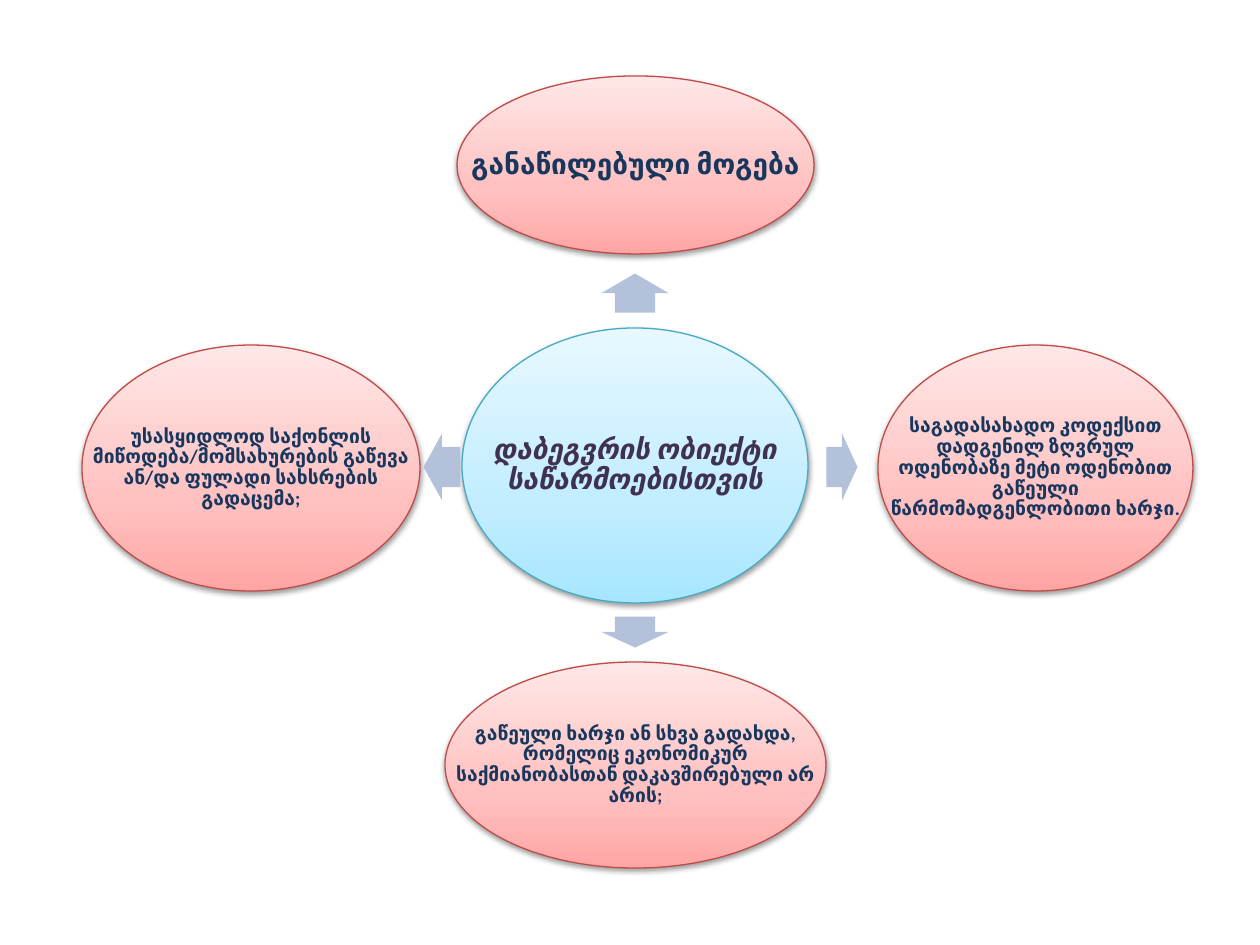
from lxml import etree
from pptx import Presentation
from pptx import util as u
from pptx.dml.color import RGBColor
from pptx.enum import shapes, text
from pptx.oxml import parse_xml

PX = 914400 / 126
NS = "http://schemas.openxmlformats.org/drawingml/2006/main"
THEME = {
    "font": "Calibri", "big": 16, "small": 11,
    "hub": {"stops": ("A7E6FF", "C1EDFF", "E7F8FF"), "line": "46AAC5", "ink": "403152"},
    "leaf": {"stops": ("FFA6A5", "FFC0BF", "FFE7E7"), "line": "BF4C48", "ink": "17375E"},
    "arrow": "B3C1DB",
}


def px(*nums):
    return [u.Emu(round(n * PX)) for n in nums]


def oval(box, look, words, size):
    """Add a shaded ellipse and its caption across the full width."""
    tone = THEME[look]
    form = slide.shapes.add_shape(shapes.MSO_SHAPE.OVAL, *px(*box))
    form.line.color.rgb = RGBColor.from_string(tone["line"])
    form.line.width = u.Pt(0.75)
    stops = "".join(f'<a:gs pos="{pos}"><a:srgbClr val="{rgb}"/></a:gs>'
                    for pos, rgb in zip((0, 35000, 100000), tone["stops"]))
    prop = form._element.spPr
    prop.find(f"{{{NS}}}prstGeom").addnext(parse_xml(
        f'<a:gradFill xmlns:a="{NS}" rotWithShape="1"><a:gsLst>{stops}</a:gsLst>'
        '<a:lin ang="16200000" scaled="0"/></a:gradFill>'))
    form.shadow.inherit = False
    glow = etree.SubElement(prop.find(f"{{{NS}}}effectLst"), f"{{{NS}}}outerShdw",
                            blurRad="40000", dist="20000", dir="5400000", rotWithShape="0")
    shade = etree.SubElement(glow, f"{{{NS}}}srgbClr", val="000000")
    etree.SubElement(shade, f"{{{NS}}}alpha", val="38000")

    frame = slide.shapes.add_textbox(*px(*box)).text_frame
    frame.word_wrap = True
    frame.vertical_anchor = text.MSO_ANCHOR.MIDDLE
    frame.margin_left, frame.margin_top, frame.margin_right, frame.margin_bottom = px(2, 2, 2, 2)
    frame.text = words
    para = frame.paragraphs[0]
    para.alignment = text.PP_ALIGN.CENTER
    para.line_spacing = 0.9
    font = para.runs[0].font
    font.name, font.size, font.bold = THEME["font"], u.Pt(THEME[size]), True
    font.italic = look == "hub"
    font.color.rgb = RGBColor.from_string(tone["ink"])


deck = Presentation()
deck.slide_width, deck.slide_height = px(1260, 945)
slide = deck.slides.add_slide(deck.slide_layouts[6])

oval((462, 328, 346, 275), "hub", "დაბეგვრის ობიექტი საწარმოებისთვის", "big")

leaves = [
    ((457, 76, 357, 178), "განაწილებული მოგება", "big"),
    ((878, 345, 315, 246), "საგადასახადო კოდექსით დადგენილ ზღვრულ ოდენობაზე მეტი "
     "ოდენობით გაწეული წარმომადგენლობითი ხარჯი.", "small"),
    ((445, 662, 381, 206), "გაწეული ხარჯი ან სხვა გადახდა, რომელიც ეკონომიკურ "
     "საქმიანობასთან დაკავშირებული არ არის;", "small"),
    ((82, 345, 338, 246), "უსასყიდლოდ საქონლის მიწოდება/მომსახურების გაწევა "
     "ან/და ფულადი სახსრების გადაცემა;", "small"),
]
for box, words, size in leaves:
    oval(box, "leaf", words, size)

# Arrow centre, length and turn, clockwise from the top
WIDE = 67
for mid, row, long, turn in [(635, 293, 39, 270), (842, 467, 31, 0),
                             (635, 632, 31, 90), (442, 467, 37, 180)]:
    arrow = slide.shapes.add_shape(shapes.MSO_SHAPE.RIGHT_ARROW,
                                   *px(mid - long / 2, row - WIDE / 2, long, WIDE))
    arrow.adjustments[0], arrow.adjustments[1] = 0.6, 0.5
    arrow.rotation = turn
    arrow.fill.solid()
    arrow.fill.fore_color.rgb = RGBColor.from_string(THEME["arrow"])
    arrow.line.fill.background()
    arrow.shadow.inherit = False

deck.save("out.pptx")
